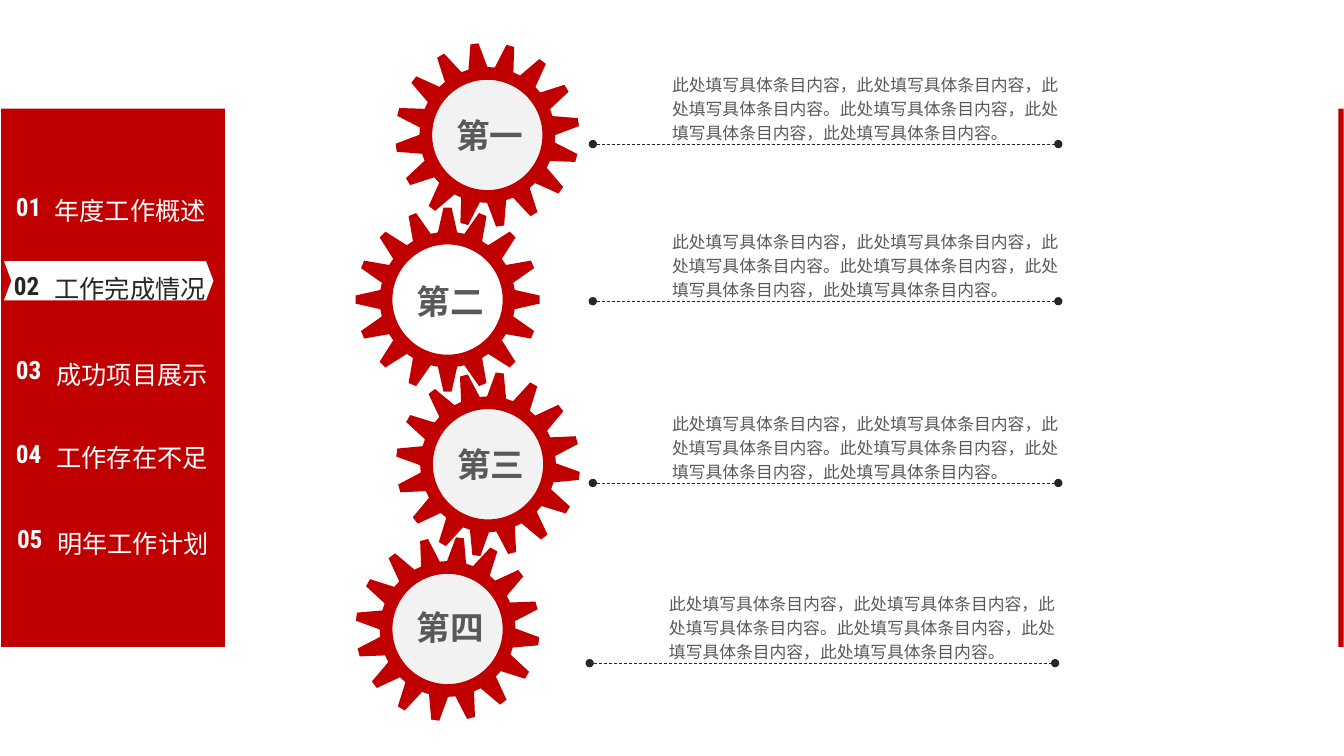
from dataclasses import dataclass
from math import cos, pi, radians, sin

from lxml import etree
from pptx import Presentation
from pptx.dml.color import RGBColor
from pptx.enum import dml, shapes, text
from pptx.oxml import ns
from pptx.util import Cm, Pt


@dataclass(frozen=True)
class Theme:
    red: str = "C00000"
    white: str = "FFFFFF"
    pale: str = "F2F2F2"
    dark: str = "262626"
    grey: str = "595959"
    number_font: str = "Roboto Condensed"
    menu_font: str = "Open Sans"
    title_font: str = "Arial Narrow"
    body_font: str = "Calibri"
    menu_size: int = 18
    title_size: int = 24
    body_size: int = 12


THEME = Theme()

# Number, number position, label, label position (cm)
MENU = [
    ("01", (0.15, 4.7), "年度工作概述", (0.69, 4.42)),
    ("02", (0.1, 6.68), "工作完成情况", (0.69, 6.38)),
    ("03", (0.15, 8.81), "成功项目展示", (0.74, 8.56)),
    ("04", (0.15, 10.92), "工作存在不足", (0.74, 10.64)),
    ("05", (0.18, 13.06), "明年工作计划", (0.76, 12.8)),
]
CURRENT = "02"

# Title, title top, gear centre x, turn in degrees, has a pale disc
GEARS = [
    ("第一", 2.77, 12.28, 14.5, True),
    ("第二", 6.96, 11.28, 0, False),
    ("第三", 11.05, 12.3, 7.3, True),
    ("第四", 15.16, 11.28, 7.7, True),
]
FIRST_GEAR_Y, GEAR_STEP = 3.4, 4.15

TEETH = 16
TIP_RADIUS, ROOT_RADIUS, HOLE_RADIUS, DISC_RADIUS = 2.32, 1.71, 1.39, 1.53
TIP_HALF, ROOT_HALF = 0.044, 0.142  # half widths of a tooth, radians

# Left end and height of each rule under a description (cm)
RULES = [(14.94, 3.63), (14.94, 7.59), (14.94, 12.17), (14.86, 16.71)]
RULE_LENGTH = 11.73
PHRASE = "此处填写具体条目内容"
DESCRIPTION = (f"{PHRASE}，" * 2 + f"{PHRASE}。") * 2


def paint(shape, colour):
    shape.shadow.inherit = False
    shape.fill.solid()
    shape.fill.fore_color.rgb = RGBColor.from_string(colour)
    shape.line.fill.background()


def add_block(slide, preset, left, top, width, height, colour):
    block = slide.shapes.add_shape(preset, Cm(left), Cm(top), Cm(width), Cm(height))
    paint(block, colour)
    return block


def add_text(slide, wording, left, top, width, height, font, size, colour,
             bold=False, wrap=True, spacing=None, align=None):
    frame = slide.shapes.add_textbox(Cm(left), Cm(top), Cm(width), Cm(height)).text_frame
    frame.word_wrap = wrap
    frame.auto_size = text.MSO_AUTO_SIZE.SHAPE_TO_FIT_TEXT
    paragraph = frame.paragraphs[0]
    paragraph.text = wording
    paragraph.alignment = align
    paragraph.line_spacing = spacing
    paragraph.font.name = font
    paragraph.font.size = Pt(size)
    paragraph.font.bold = bold
    paragraph.font.color.rgb = RGBColor.from_string(colour)


def add_gear(slide, x, y, turn):
    def point(radius, angle):
        return Cm(x + radius * sin(angle)), Cm(y - radius * cos(angle))

    profile = [(ROOT_RADIUS, -ROOT_HALF), (TIP_RADIUS, -TIP_HALF),
               (TIP_RADIUS, TIP_HALF), (ROOT_RADIUS, ROOT_HALF)]
    rim = [point(radius, radians(turn) + tooth * 2 * pi / TEETH + offset)
           for tooth in range(TEETH) for radius, offset in profile]
    hole = [point(HOLE_RADIUS, -step * 2 * pi / 90) for step in range(90)]

    builder = slide.shapes.build_freeform(*rim[0])
    builder.add_line_segments(rim[1:], close=True)
    builder.move_to(*hole[0])
    builder.add_line_segments(hole[1:], close=True)
    paint(builder.convert_to_shape(), THEME.red)


def add_rule(slide, left, y):
    rule = slide.shapes.add_connector(
        shapes.MSO_CONNECTOR.STRAIGHT, Cm(left + RULE_LENGTH), Cm(y), Cm(left), Cm(y))
    rule.line.color.rgb = RGBColor.from_string(THEME.dark)
    rule.line.width = Pt(0.5)
    rule.line.dash_style = dml.MSO_LINE.DASH
    outline = rule.line._get_or_add_ln()
    for end in ("a:headEnd", "a:tailEnd"):
        etree.SubElement(outline, ns.qn(end), type="oval")
    etree.SubElement(rule._element.spPr, ns.qn("a:effectLst"))


def add_menu(slide):
    add_block(slide, shapes.MSO_SHAPE.RECTANGLE, 0.03, 2.74, 5.64, 13.56, THEME.red)
    marker = add_block(slide, shapes.MSO_SHAPE.CHEVRON, 0.1, 6.58, 5.28, 0.99, THEME.white)
    marker.adjustments[0] = 0.189
    for number, number_at, label, label_at in MENU:
        colour = THEME.dark if number == CURRENT else THEME.white
        add_text(slide, number, *number_at, 1.42, 1.02,
                 THEME.number_font, THEME.menu_size, colour, bold=True)
        add_text(slide, label, *label_at, 5.18, 1.27,
                 THEME.menu_font, THEME.menu_size, colour,
                 spacing=1.5, align=text.PP_ALIGN.CENTER)


def add_gear_column(slide):
    for index, (title, title_top, x, turn, has_disc) in enumerate(GEARS):
        y = FIRST_GEAR_Y + index * GEAR_STEP
        if has_disc:
            add_block(slide, shapes.MSO_SHAPE.OVAL, x - DISC_RADIUS, y - DISC_RADIUS,
                      2 * DISC_RADIUS, 2 * DISC_RADIUS, THEME.pale)
        add_gear(slide, x, y, turn)
        add_text(slide, title, x - 1.03, title_top, 2.24, 1.27,
                 THEME.title_font, THEME.title_size, THEME.grey, bold=True, wrap=False)


def add_descriptions(slide):
    for left, y in RULES:
        add_rule(slide, left, y)
        add_text(slide, DESCRIPTION, left + 1.75, y - 1.98, 10.36, 2.11,
                 THEME.body_font, THEME.body_size, THEME.grey, spacing=1.2)


def main():
    deck = Presentation()
    deck.slide_width, deck.slide_height = Cm(33.87), Cm(19.05)
    slide = deck.slides.add_slide(deck.slide_layouts[6])

    # Chapter menu on the left
    add_menu(slide)
    # Four interlocking gears with their titles
    add_gear_column(slide)
    # Descriptions with dashed rules
    add_descriptions(slide)
    # Edge strip on the right
    add_block(slide, shapes.MSO_SHAPE.RECTANGLE, 33.73, 2.74, 0.13, 13.56, THEME.red)

    deck.save("out.pptx")


if __name__ == "__main__":
    main()
